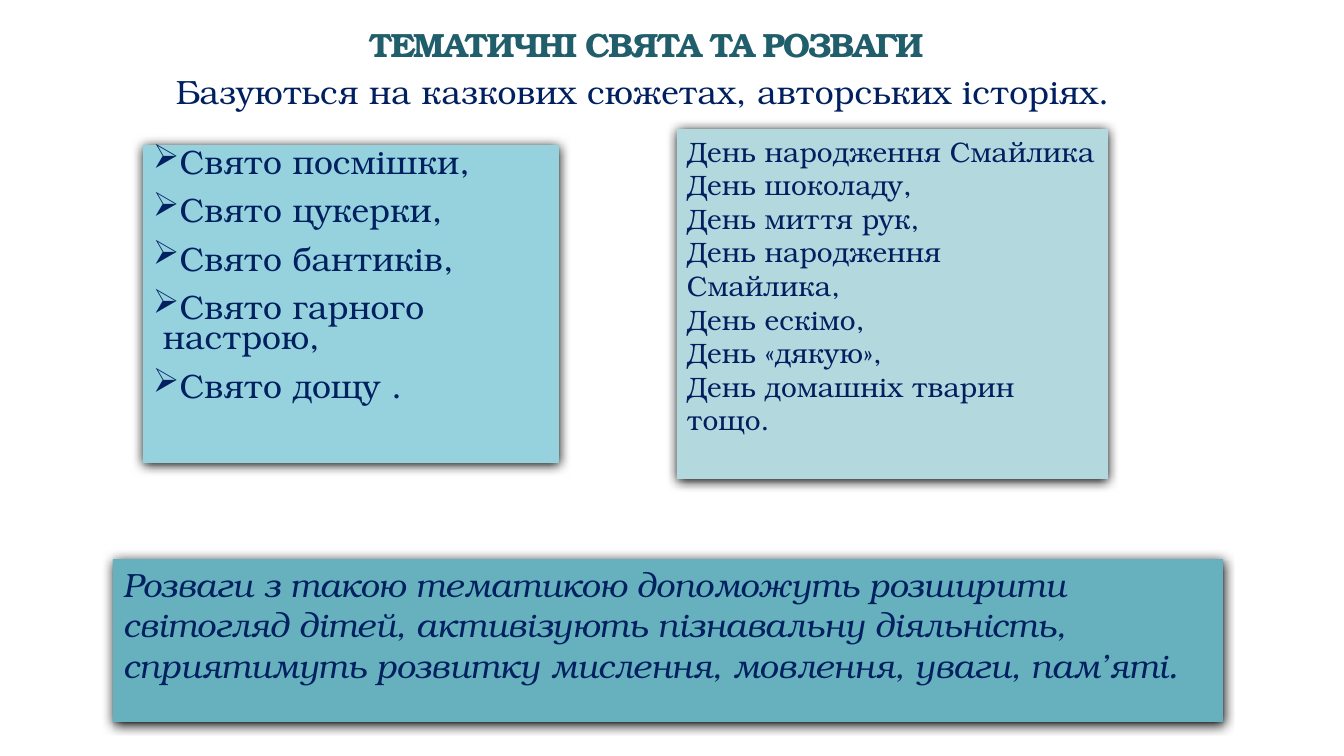
from lxml import etree
from pptx import Presentation
from pptx.dml.color import RGBColor
from pptx.enum.shapes import MSO_SHAPE
from pptx.enum.text import MSO_ANCHOR, PP_ALIGN
from pptx.oxml.ns import qn
from pptx.util import Inches, Pt

RECTANGLE = MSO_SHAPE.RECTANGLE
TOP = MSO_ANCHOR.TOP
LEFT, CENTER = PP_ALIGN.LEFT, PP_ALIGN.CENTER

PX_PER_INCH = 100.8
FONT_NAME = "TeX Gyre Bonum"
BLANK_LAYOUT = 6
COLORS = {
    "title": "215E6B",
    "text": "002060",
    "holidays": "96D2DE",
    "days": "B3D8DE",
    "summary": "66B1BD",
    "shadow": "000000",
}

TITLE = "ТЕМАТИЧНІ СВЯТА ТА РОЗВАГИ"
SUBTITLE = "Базуються на казкових сюжетах, авторських історіях."
HOLIDAYS = [
    "Свято посмішки,",
    "Свято цукерки,",
    "Свято бантиків,",
    "Свято гарного настрою,",
    "Свято дощу .",
]
DAYS = [
    "День народження Смайлика",
    "День шоколаду,",
    "День миття рук,",
    "День народження Смайлика,",
    "День ескімо,",
    "День «дякую»,",
    "День домашніх тварин тощо.",
]
SUMMARY = (
    "Розваги з такою тематикою допоможуть розширити світогляд дітей, "
    "активізують пізнавальну діяльність, сприятимуть розвитку мислення, "
    "мовлення, уваги, пам’яті."
)


def px(length):
    return round(length * Inches(1) / PX_PER_INCH)


def add_shadow(shape):
    effects = shape._element.spPr.find(qn("a:effectLst"))
    shadow = etree.SubElement(
        effects, qn("a:outerShdw"), blurRad=str(Pt(8.5)), dist=str(Pt(1)),
        dir="5400000", algn="ctr", rotWithShape="0")
    etree.SubElement(shadow, qn("a:srgbClr"), val=COLORS["shadow"])


def add_bullet(para, indent):
    properties = para._p.get_or_add_pPr()
    properties.set("marL", str(px(indent)))
    properties.set("indent", str(-px(indent)))
    etree.SubElement(properties, qn("a:buChar"), char="➢")


def write_text(shape, lines, size, color="text", align=LEFT, spacing=None,
               gap=0, bullet_indent=None, top_inset=5, **font_format):
    """Fill the shape with paragraphs and return their runs."""
    frame = shape.text_frame
    frame.word_wrap = True
    frame.vertical_anchor = TOP
    frame.margin_top = px(top_inset)
    spans = []
    for index, line in enumerate(lines):
        para = frame.paragraphs[0] if index == 0 else frame.add_paragraph()
        para.alignment = align
        if spacing:
            para.line_spacing = spacing
        if index and gap:
            para.space_before = Pt(gap)
        if bullet_indent:
            add_bullet(para, bullet_indent)
        span = para.add_run()
        span.text = line
        span.font.color.rgb = RGBColor.from_string(COLORS[color])
        values = {"name": FONT_NAME, "size": Pt(size), **font_format}
        for name, value in values.items():
            setattr(span.font, name, value)
        spans.append(span)
    return spans


def add_text(page, box, lines, **text_format):
    shape = page.shapes.add_textbox(*map(px, box))
    return write_text(shape, lines, **text_format)


def add_panel(page, box, fill, lines, **text_format):
    shape = page.shapes.add_shape(RECTANGLE, *map(px, box))
    shape.shadow.inherit = False
    add_shadow(shape)
    shape.fill.solid()
    shape.fill.fore_color.rgb = RGBColor.from_string(COLORS[fill])
    shape.line.fill.background()
    write_text(shape, lines, **text_format)


def add_heading(page, box):
    left, top, width, height = box
    title_spans = add_text(
        page, (left + 78, top, 804, 75), [TITLE], size=24, color="title",
        align=CENTER, spacing=0.85, top_inset=3, bold=True)
    for span in title_spans:
        span.font._element.set("spc", "-120")
    add_text(page, (left, top + 39, width, height - 39), [SUBTITLE], size=24)


def build_slide(deck):
    page = deck.slides.add_slide(deck.slide_layouts[BLANK_LAYOUT])
    add_heading(page, (166, 27, 1088, 121))
    add_panel(page, (143, 145, 416, 318), "holidays", HOLIDAYS, size=24,
              spacing=0.75, gap=13, bullet_indent=10)
    add_panel(page, (677, 129, 431, 350), "days", DAYS, size=20)
    add_panel(page, (113, 559, 1110, 163), "summary", [SUMMARY], size=24,
              italic=True)


def main():
    deck = Presentation()
    deck.slide_width, deck.slide_height = px(1344), px(756)
    build_slide(deck)
    deck.save("out.pptx")


if __name__ == "__main__":
    main()
